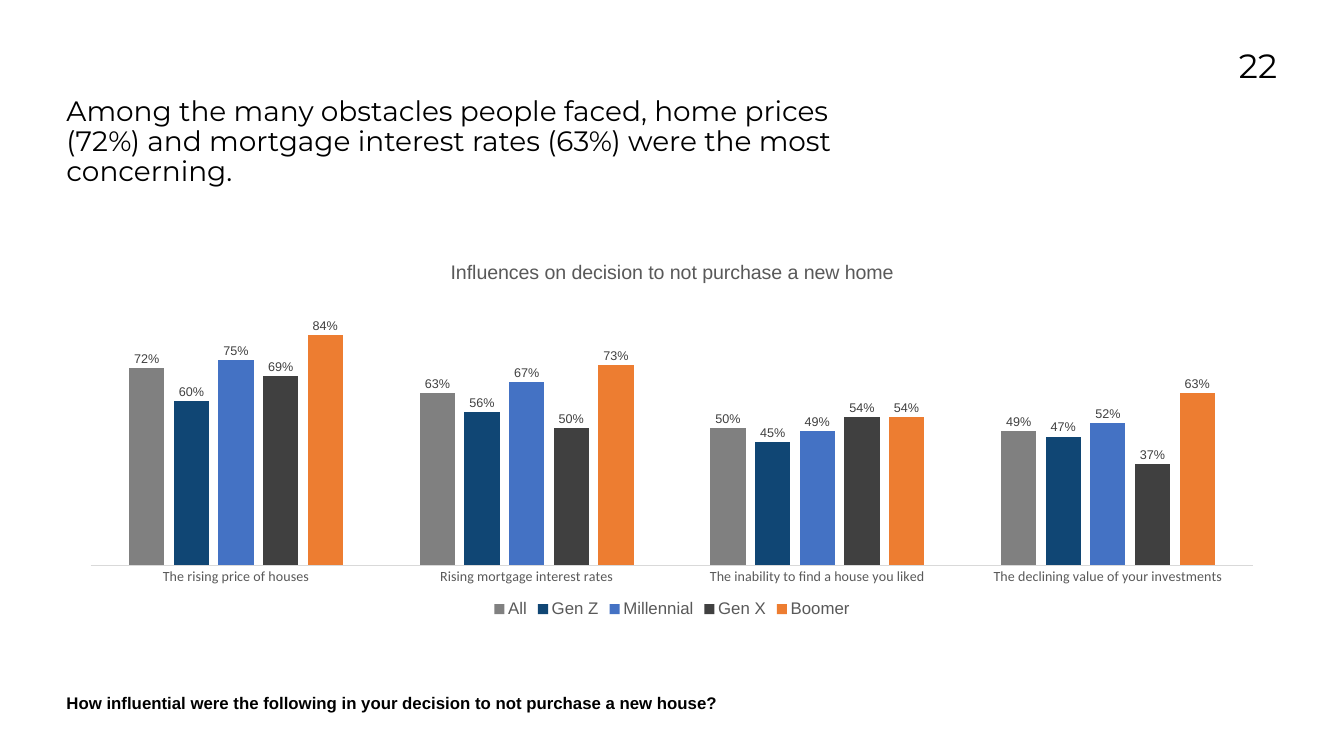
"""Build the slide on obstacles to purchasing a new home."""
from lxml import etree
from pptx import Presentation
from pptx.chart.data import CategoryChartData
from pptx.dml.color import RGBColor
from pptx.enum.chart import XL_CHART_TYPE, XL_LABEL_POSITION, XL_LEGEND_POSITION, XL_TICK_MARK
from pptx.enum.text import PP_ALIGN
from pptx.oxml.ns import qn
from pptx.util import Pt

COLUMNS = XL_CHART_TYPE.COLUMN_CLUSTERED
OUTSIDE_END = XL_LABEL_POSITION.OUTSIDE_END
BOTTOM = XL_LEGEND_POSITION.BOTTOM
NO_TICK = XL_TICK_MARK.NONE
LEFT, RIGHT = PP_ALIGN.LEFT, PP_ALIGN.RIGHT

COLOURS = {
    "text": "000000", "muted": "595959", "label": "404040", "axis": "D9D9D9",
    "All": "808080", "Gen Z": "104674", "Millennial": "4472C4",
    "Gen X": "404040", "Boomer": "ED7D31",
}
CATEGORIES = [
    "The rising price of houses",
    "Rising mortgage interest rates",
    "The inability to find a house you liked",
    "The declining value of your investments",
]
SHARES = {
    "All": (0.72, 0.63, 0.50, 0.49),
    "Gen Z": (0.60, 0.56, 0.45, 0.47),
    "Millennial": (0.75, 0.67, 0.49, 0.52),
    "Gen X": (0.69, 0.50, 0.54, 0.37),
    "Boomer": (0.84, 0.73, 0.54, 0.63),
}
PLOT_LAYOUT = {"x": 0.02, "y": 0.12, "w": 0.96, "h": 0.73}
MARGIN = 95

deck = Presentation()
deck.slide_width, deck.slide_height = Pt(1920), Pt(1080)
page = deck.slides.add_slide(deck.slide_layouts[6])


def set_font(font, size, colour, name="Arial", bold=False):
    font.size, font.name, font.bold = Pt(size), name, bold
    font.color.rgb = RGBColor.from_string(COLOURS[colour])


def add_text(text, left, top, width, height, size, name="Montserrat",
             bold=False, align=LEFT, spacing=1.0):
    box = page.shapes.add_textbox(Pt(left), Pt(top), Pt(width), Pt(height))
    frame = box.text_frame
    frame.word_wrap = True
    frame.margin_left = frame.margin_right = frame.margin_top = frame.margin_bottom = 0
    para = frame.paragraphs[0]
    para.alignment, para.line_spacing = align, spacing
    span = para.add_run()
    span.text = text
    set_font(span.font, size, "text", name, bold)


add_text("22", left=1662.5, top=63.5, width=162, height=118, size=48, align=RIGHT)

data = CategoryChartData(number_format="0%")
data.categories = CATEGORIES
for group, shares in SHARES.items():
    data.add_series(group, shares)
chart = page.shapes.add_chart(
    COLUMNS, Pt(MARGIN), Pt(351.5), Pt(1730), Pt(537), data).chart
set_font(chart.font, 10, "text", "Calibri")

chart.has_title = True
title = chart.chart_title
title.include_in_layout = False
title.text_frame.text = "Influences on decision to not purchase a new home"
set_font(title.text_frame.paragraphs[0].runs[0].font, 28, "muted")

chart.has_legend = True
chart.legend.position = BOTTOM
chart.legend.include_in_layout = False
set_font(chart.legend.font, 24, "muted")

category_axis = chart.category_axis
category_axis.major_tick_mark = category_axis.minor_tick_mark = NO_TICK
category_axis.format.line.color.rgb = RGBColor.from_string(COLOURS["axis"])
category_axis.format.line.width = Pt(0.75)
set_font(category_axis.tick_labels.font, 20, "muted", "Calibri")

value_axis = chart.value_axis
value_axis.minimum_scale, value_axis.maximum_scale = 0, 1
value_axis.has_major_gridlines = False
value_axis.visible = False

plot = chart.plots[0]
plot.gap_width, plot.overlap = 219, -27
plot.vary_by_categories = False
for series in plot.series:
    series.format.fill.solid()
    series.format.fill.fore_color.rgb = RGBColor.from_string(COLOURS[series.name])
    labels = series.data_labels
    labels.show_value = True
    labels.position = OUTSIDE_END
    labels.number_format, labels.number_format_is_linked = "0%", False
    set_font(labels.font, 18, "label")

plot_area = chart.element.find(".//" + qn("c:plotArea"))
for layout in plot_area.findall(qn("c:layout")):
    plot_area.remove(layout)
layout = etree.Element(qn("c:layout"))
plot_area.insert(0, layout)
manual = etree.SubElement(layout, qn("c:manualLayout"))
settings = {"layoutTarget": "inner", "xMode": "edge", "yMode": "edge", **PLOT_LAYOUT}
for tag, value in settings.items():
    etree.SubElement(manual, qn("c:" + tag)).set("val", str(value))

add_text("Among the many obstacles people faced, home prices (72%) and mortgage "
         "interest rates (63%) were the most concerning.",
         left=MARGIN, top=139, width=1153, height=150, size=40, spacing=0.9)
add_text("How influential were the following in your decision to not purchase a new house?",
         left=MARGIN, top=975.5, width=955.5, height=47, size=24,
         name="Arial", bold=True, spacing=1.5)

deck.save("out.pptx")
